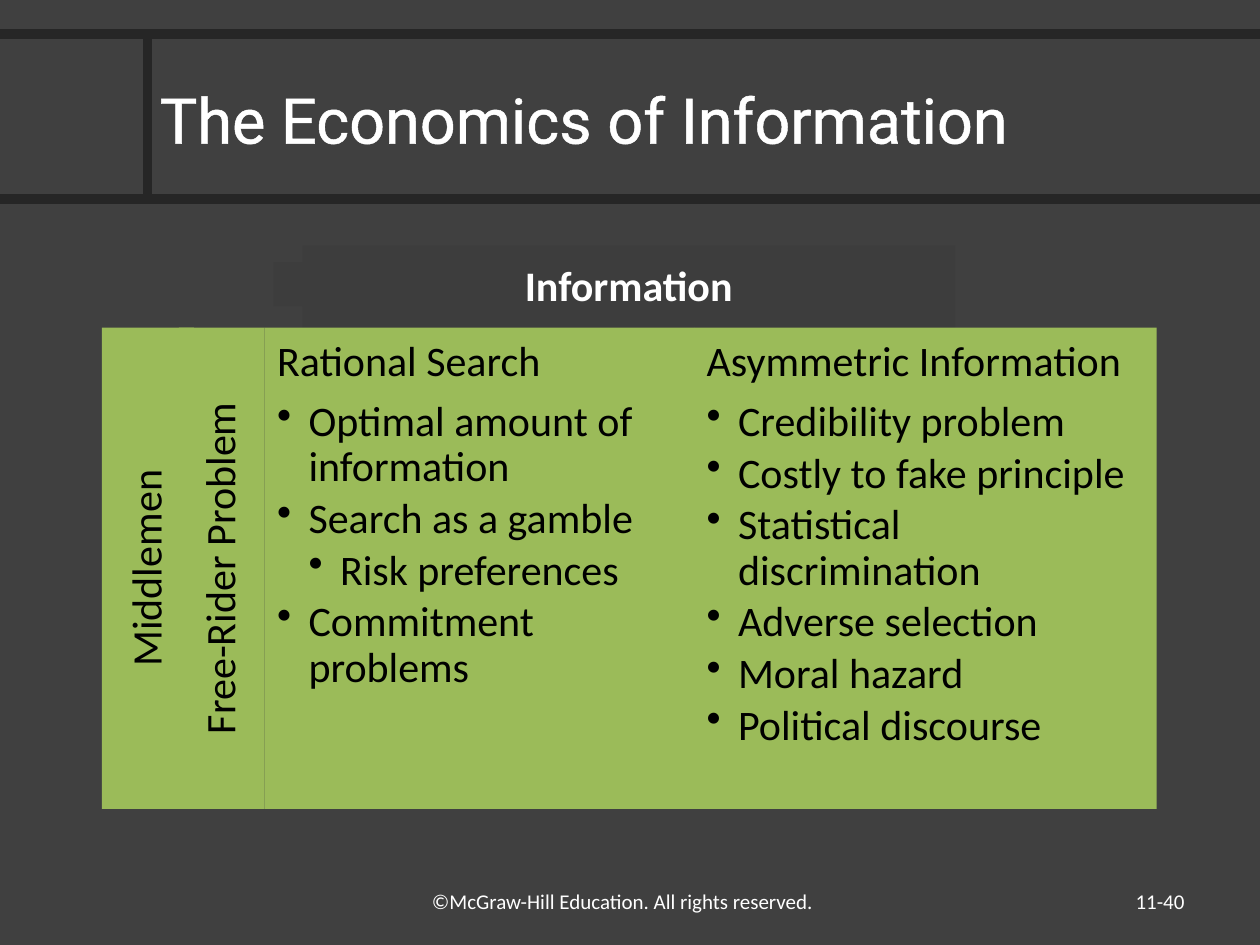
import pptx
import pptx.util
from lxml import etree
from pptx.dml.color import RGBColor
from pptx.enum.shapes import MSO_CONNECTOR, MSO_SHAPE
from pptx.enum.text import MSO_ANCHOR, PP_ALIGN
from pptx.oxml.ns import qn
from pptx.util import Inches, Pt

BACKGROUND = RGBColor(0x40, 0x40, 0x40)
RULE = RGBColor(0x26, 0x26, 0x26)
HEADER = RGBColor(0x3D, 0x3D, 0x3D)
GREEN = RGBColor(0x9B, 0xBB, 0x59)
WHITE = RGBColor(0xFF, 0xFF, 0xFF)
BLACK = RGBColor(0, 0, 0)

BODY_SIZE = 24
PANEL_TOP, PANEL_HEIGHT = 2.6, 3.82
INDENT = 0.25

SIDE_BARS = [(0.81, 0.73, "Middlemen"), (1.42, 0.68, "Free-Rider Problem")]
# Each panel: left, width, heading, then (level, text) bullets.
PANELS = [
    (2.1, 3.41, "Rational Search", [
        (1, "Optimal amount of information"),
        (1, "Search as a gamble"),
        (2, "Risk preferences"),
        (1, "Commitment problems"),
    ]),
    (5.51, 3.67, "Asymmetric Information", [
        (1, "Credibility problem"),
        (1, "Costly to fake principle"),
        (1, "Statistical discrimination"),
        (1, "Adverse selection"),
        (1, "Moral hazard"),
        (1, "Political discourse"),
    ]),
]


class SlideBuilder:
    def __init__(self, slide, font="Calibri"):
        self.slide = slide
        self.font = font
        slide.background.fill.solid()
        slide.background.fill.fore_color.rgb = BACKGROUND

    def rule(self, x1, y1, x2, y2):
        line = self.slide.shapes.add_connector(
            MSO_CONNECTOR.STRAIGHT, Inches(x1), Inches(y1), Inches(x2), Inches(y2))
        line.line.color.rgb = RULE
        line.line.width = Pt(5.5)
        etree.SubElement(line._element.spPr, qn("a:effectLst"))

    def block(self, left, top, width, height, color):
        block = self.slide.shapes.add_shape(
            MSO_SHAPE.RECTANGLE, Inches(left), Inches(top), Inches(width), Inches(height))
        block.shadow.inherit = False
        block.fill.solid()
        block.fill.fore_color.rgb = color
        block.line.fill.background()
        return block

    def style(self, paragraph, text, size, color, align=PP_ALIGN.LEFT, bold=False, font=None):
        paragraph.text = text
        paragraph.alignment = align
        run_font = paragraph.runs[0].font
        run_font.name = font or self.font
        run_font.size = Pt(size)
        run_font.bold = bold
        run_font.color.rgb = color

    def text(self, left, top, width, height, text, size,
             align=PP_ALIGN.LEFT, anchor=MSO_ANCHOR.TOP, font=None):
        box = self.slide.shapes.add_textbox(
            Inches(left), Inches(top), Inches(width), Inches(height))
        frame = box.text_frame
        frame.word_wrap = True
        frame.vertical_anchor = anchor
        self.style(frame.paragraphs[0], text, size, WHITE, align, font=font)
        return frame.paragraphs[0].runs[0]

    def outline(self, run, color, width):
        """Stroke the letters of a run."""
        stroke = etree.Element(qn("a:ln"), w=str(Pt(width)))
        fill = etree.SubElement(stroke, qn("a:solidFill"))
        etree.SubElement(fill, qn("a:srgbClr"), val=str(color))
        run._r.get_or_add_rPr().insert(0, stroke)

    def inset_frame(self, block, anchor):
        frame = block.text_frame
        frame.word_wrap = True
        frame.vertical_anchor = anchor
        frame.margin_left = frame.margin_right = Inches(0.1)
        frame.margin_top = frame.margin_bottom = Inches(0.1)
        return frame

    def heading(self, frame, text, color, align=PP_ALIGN.LEFT, bold=False):
        paragraph = frame.paragraphs[0]
        self.style(paragraph, text, BODY_SIZE, color, align, bold)
        paragraph.line_spacing = 0.9
        paragraph.space_after = Pt(0.35 * BODY_SIZE)

    def label(self, left, top, width, height, text, fill, color, bold=False, upward=False):
        block = self.block(left, top, width, height, fill)
        frame = self.inset_frame(block, MSO_ANCHOR.MIDDLE)
        if upward:
            frame._txBody.bodyPr.set("vert", "vert270")
        self.heading(frame, text, color, PP_ALIGN.CENTER, bold)

    def bullet(self, frame, level, text):
        paragraph = frame.add_paragraph()
        properties = paragraph._p.get_or_add_pPr()
        properties.set("marL", str(Inches(INDENT * level)))
        properties.set("indent", str(Inches(-INDENT)))
        etree.SubElement(properties, qn("a:buChar"), char="•")
        paragraph.level = level
        paragraph.line_spacing = 0.9
        paragraph.space_after = Pt(0.15 * BODY_SIZE)
        self.style(paragraph, text, BODY_SIZE, BLACK)

    def panel(self, left, width, heading, bullets):
        block = self.block(left, PANEL_TOP, width, PANEL_HEIGHT, GREEN)
        frame = self.inset_frame(block, MSO_ANCHOR.TOP)
        self.heading(frame, heading, BLACK)
        for level, text in bullets:
            self.bullet(frame, level, text)


def main():
    deck = pptx.Presentation()
    deck.slide_width, deck.slide_height = Inches(10), Inches(7.5)
    builder = SlideBuilder(deck.slides.add_slide(deck.slide_layouts[6]))

    builder.rule(0, 1.58, 10, 1.58)
    builder.rule(1.17, 0.27, 1.17, 1.58)
    builder.rule(0, 0.27, 10, 0.27)
    title = builder.text(1.17, 0.3, 8.83, 1.28, "The Economics of Information", 36,
                         anchor=MSO_ANCHOR.MIDDLE, font="Roboto")
    builder.outline(title, WHITE, 1.45)

    builder.label(2.4, 1.95, 5.18, 0.67, "Information", HEADER, WHITE, bold=True)
    for left, width, text in SIDE_BARS:
        builder.label(left, PANEL_TOP, width, PANEL_HEIGHT, text, GREEN, BLACK, upward=True)
    for panel in PANELS:
        builder.panel(*panel)
    builder.block(2.17, 2.08, 1.78, 0.35, HEADER)

    builder.text(3.33, 7, 4.17, 0.35, "©McGraw-Hill Education. All rights reserved.", 12)
    builder.text(7.17, 6.95, 2.33, 0.4, "11-40", 12, PP_ALIGN.RIGHT, MSO_ANCHOR.MIDDLE)

    deck.save("out.pptx")


if __name__ == "__main__":
    main()
